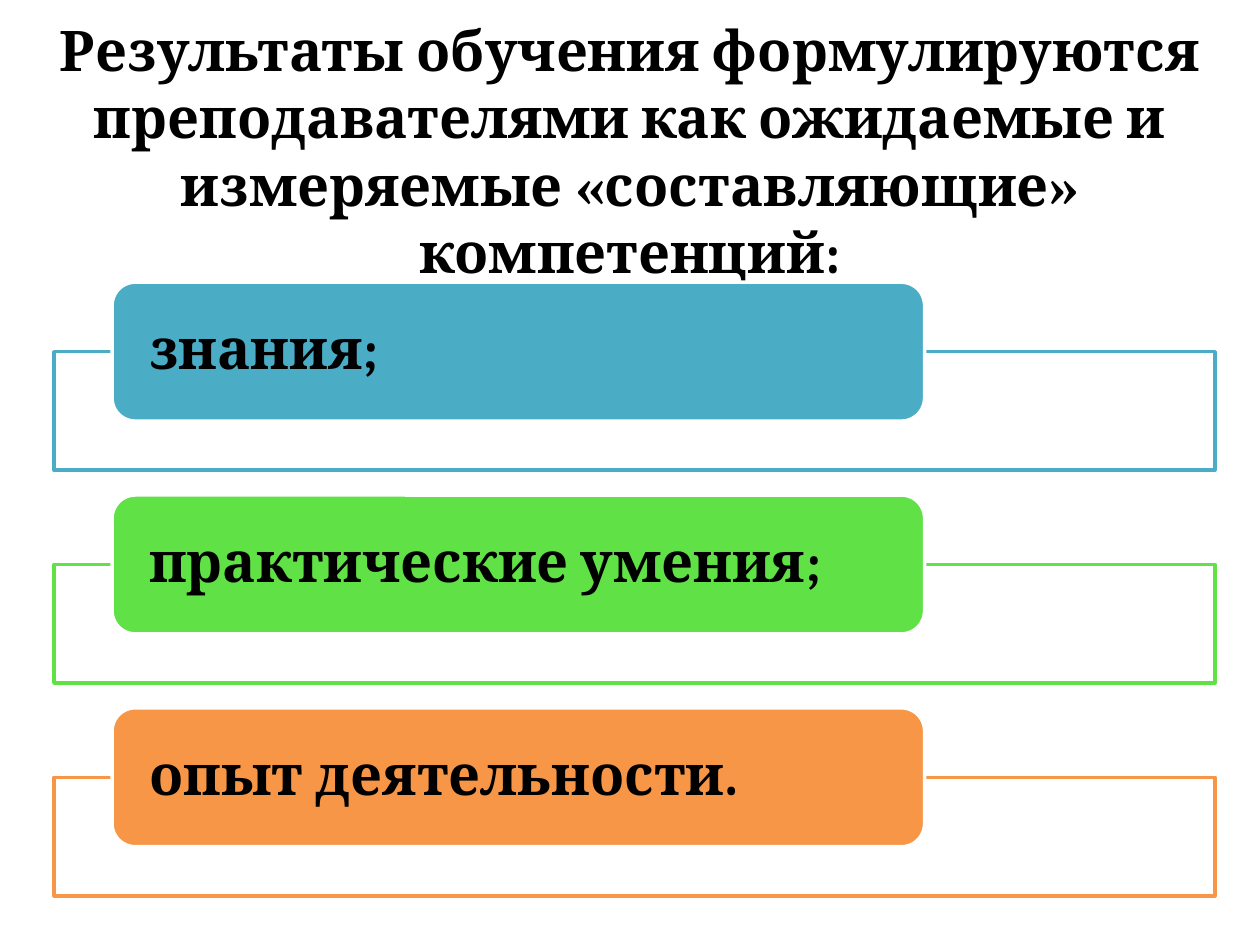
import dataclasses
import pptx
import pptx.util
import pptx.dml.color
import pptx.enum.shapes
import pptx.enum.text
import pptx.oxml

Cm = pptx.util.Cm
Shapes = pptx.enum.shapes.MSO_SHAPE
Align = pptx.enum.text.PP_ALIGN
ALPHA = '<a:alpha xmlns:a="http://schemas.openxmlformats.org/drawingml/2006/main" val="90000"/>'


@dataclasses.dataclass(frozen=True)
class Theme:
    font: str = "Cambria"
    size: int = 32
    line: int = 2
    text: str = "000000"
    paper: str = "FFFFFF"


@dataclasses.dataclass(frozen=True)
class Box:
    left: float
    top: float
    width: float
    height: float

    def lengths(self):
        return [Cm(value) for value in dataclasses.astuple(self)]


THEME = Theme()
TITLE = ("Результаты обучения формулируются преподавателями как ожидаемые "
         "и измеряемые «составляющие» компетенций:")
OUTCOMES = [
    ("знания;", "4BACC6"),
    ("практические умения;", "60E146"),
    ("опыт деятельности.", "F79646"),
]


def rgb(code):
    return pptx.dml.color.RGBColor.from_string(code)


def set_all(target, values):
    for name, value in values.items():
        setattr(target, name, value)


def write_text(shape, words, align, inset, spacing):
    frame = shape.text_frame
    set_all(frame, {
        "word_wrap": True,
        "auto_size": pptx.enum.text.MSO_AUTO_SIZE.NONE,
        "vertical_anchor": pptx.enum.text.MSO_ANCHOR.MIDDLE,
        "margin_left": Cm(inset), "margin_right": Cm(inset),
        "margin_top": 0, "margin_bottom": 0,
    })
    para = frame.paragraphs[0]
    set_all(para, {"alignment": align, "line_spacing": spacing})
    span = para.add_run()
    span.text = words
    set_all(span.font, {"name": THEME.font, "size": pptx.util.Pt(THEME.size), "bold": True})
    span.font.color.rgb = rgb(THEME.text)


def add_panel(page, kind, box, fill, line):
    panel = page.shapes.add_shape(kind, *box.lengths())
    panel.shadow.inherit = False
    panel.fill.solid()
    panel.fill.fore_color.rgb = rgb(fill)
    panel.line.color.rgb = rgb(line)
    panel.line.width = pptx.util.Pt(THEME.line)
    return panel


def add_title(page, box):
    title = page.shapes.add_textbox(*box.lengths())
    write_text(title, TITLE, Align.CENTER, 0.25, 1.0)


def add_outcome(page, box, words, color):
    # Outlined frame behind, slightly transparent
    frame = add_panel(page, Shapes.RECTANGLE,
                      Box(box.left, box.top + 1.4, box.width, box.height - 1.4),
                      THEME.paper, color)
    frame.fill._xPr.solidFill[0].append(pptx.oxml.parse_xml(ALPHA))
    # Rounded label over the frame's top edge
    label = add_panel(page, Shapes.ROUNDED_RECTANGLE,
                      Box(box.left + 1.17, box.top, box.width * 0.7, 2.8),
                      color, THEME.paper)
    write_text(label, words, Align.LEFT, 0.61, 0.9)


def add_outcome_list(page, box, row_height):
    pitch = (box.height - row_height) / (len(OUTCOMES) - 1)
    for index, (words, color) in enumerate(OUTCOMES):
        row = Box(box.left, box.top + index * pitch, box.width, row_height)
        add_outcome(page, row, words, color)


def main():
    deck = pptx.Presentation()
    set_all(deck, {"slide_width": Cm(25.4), "slide_height": Cm(19.05)})
    page = deck.slides.add_slide(deck.slide_layouts[6])
    add_title(page, Box(0, 1.12, 25.4, 3.81))
    add_outcome_list(page, Box(1.09, 5.69, 23.4, 12.37), 3.79)
    deck.save("out.pptx")


if __name__ == "__main__":
    main()
